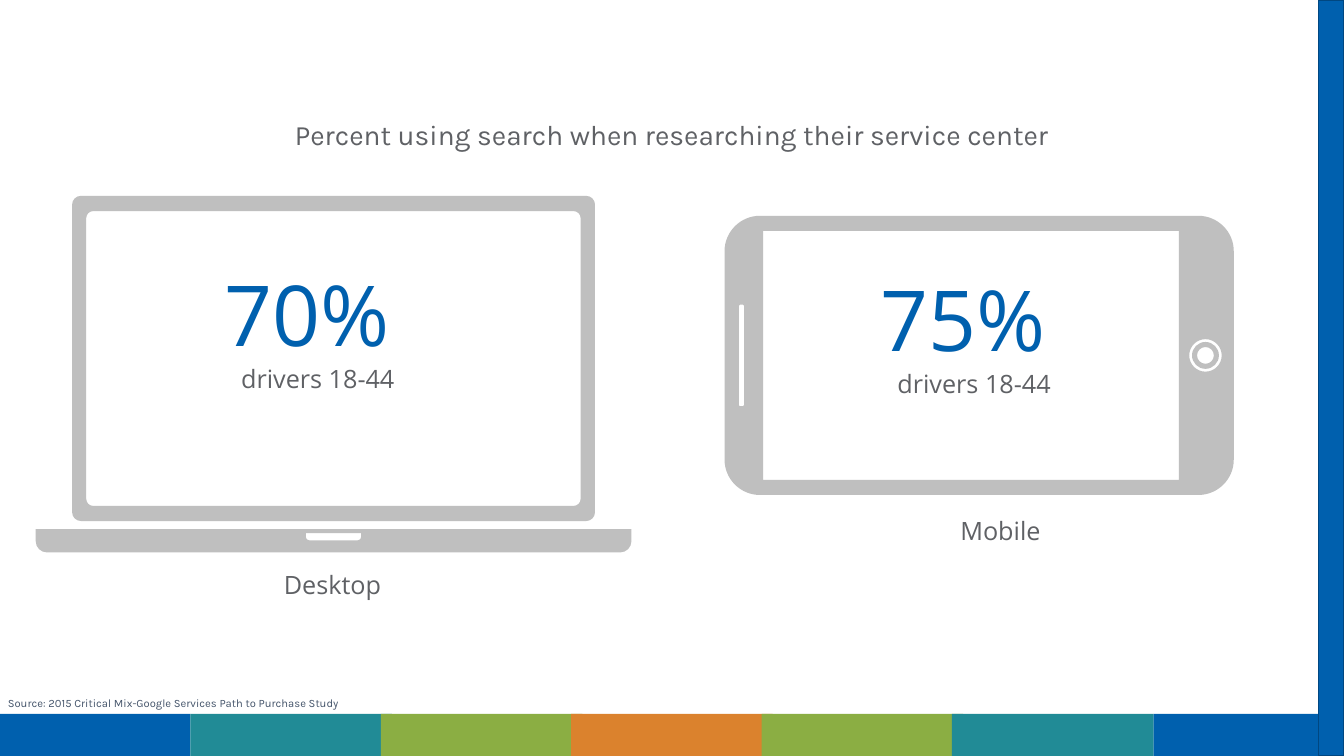
from lxml import etree
from pptx import Presentation
from pptx.dml import color
from pptx.enum import shapes, text
from pptx.oxml import ns
from pptx.util import Pt

COLORS = {
    "blue": "0060AE", "navy": "004781", "teal": "218B96", "green": "8BAE43",
    "orange": "DB822D", "silver": "BFBFBF", "gray": "5F6165", "slate": "44546A",
}
FORMATS = {
    "heading": {"name": "Karla", "size": Pt(20)},
    "percent": {"name": "Open Sans", "size": Pt(60)},
    "label": {"name": "Open Sans", "size": Pt(18)},
    "source": {"name": "Karla", "size": Pt(8)},
}
BAND = ["blue", "teal", "green", "orange", "green", "teal", "blue"]
BAND_STEP = 136
DIRECTIONS = [(1, 0), (0, 1), (-1, 0), (0, -1)]
ARC = 0.55


def rgb(name):
    return color.RGBColor.from_string(COLORS[name])


def paint(shape, fill, line=None):
    shape.shadow.inherit = False
    shape.fill.solid()
    shape.fill.fore_color.rgb = rgb(fill)
    if line:
        shape.line.color.rgb = rgb(line)
        shape.line.width = Pt(0.85)
    else:
        shape.line.fill.background()


def add_bar(slide, box, fill, line=None):
    bar = slide.shapes.add_shape(
        shapes.MSO_SHAPE.RECTANGLE, *[Pt(length) for length in box])
    paint(bar, fill, line)


def add_text(slide, box, lines, align=text.PP_ALIGN.CENTER):
    caption = slide.shapes.add_textbox(*[Pt(length) for length in box])
    frame = caption.text_frame
    frame.word_wrap = True
    for index, (words, style, ink) in enumerate(lines):
        paragraph = frame.add_paragraph() if index else frame.paragraphs[0]
        paragraph.alignment = align
        run = paragraph.add_run()
        run.text = words
        for key, value in FORMATS[style].items():
            setattr(run.font, key, value)
        run.font.color.rgb = rgb(ink)
    return frame


def rounded(left, top, right, bottom, upper=0, lower=0):
    corners = [
        (right - lower, bottom - lower, lower),
        (left + lower, bottom - lower, lower),
        (left + upper, top + upper, upper),
        (right - upper, top + upper, upper),
    ]
    steps = []
    for (x, y, radius), (ux, uy) in zip(corners, DIRECTIONS):
        weights = [(1, 0), (1, ARC), (ARC, 1), (0, 1)] if radius else [(0, 0)]
        for index, (along, across) in enumerate(weights):
            point = (Pt(x + radius * (along * ux - across * uy)),
                     Pt(y + radius * (along * uy + across * ux)))
            if index or not steps or steps[-1][0] != point:
                steps.append((point, index > 0))
    return steps


def circle(x, y, radius):
    return rounded(x - radius, y - radius, x + radius, y + radius, radius, radius)


def bend_corners(outline, contours):
    lines = list(outline.element.iter(ns.qn("a:lnTo")))
    flags = [curved for contour in contours for _, curved in contour[1:]]
    handles = [line for line, curved in zip(lines, flags) if curved]
    for start in range(0, len(handles), 3):
        trio = handles[start:start + 3]
        curve = etree.Element(ns.qn("a:cubicBezTo"))
        trio[0].addprevious(curve)
        for line in trio:
            curve.append(line[0])
            line.getparent().remove(line)


def add_device(slide, contours, rotation=0):
    tracks = [[point for point, _ in contour] for contour in contours]
    builder = slide.shapes.build_freeform(*tracks[0][0], scale=1.0)
    for index, track in enumerate(tracks):
        if index:
            builder.move_to(*track[0])
        builder.add_line_segments(track[1:], close=True)
    outline = builder.convert_to_shape()
    bend_corners(outline, contours)
    outline.rotation = rotation
    paint(outline, "silver")


def add_share(slide, left, top, percent):
    add_text(slide, (left, top, 362, 207),
             [(percent, "percent", "blue"), ("drivers 18-44", "label", "gray")])


def main():
    deck = Presentation()
    deck.slide_width, deck.slide_height = Pt(960), Pt(540)
    slide = deck.slides.add_slide(deck.slide_layouts[6])

    for index, fill in enumerate(BAND):
        last = index == len(BAND) - 1
        left = 960 - BAND_STEP if last else index * BAND_STEP
        width = BAND_STEP if index in (0, len(BAND) - 1) else 144
        add_bar(slide, (left, 510, width, 30), fill)
    add_bar(slide, (942, 0, 18, 540), "blue", "navy")

    add_share(slide, 46, 183.6, "70% ")
    add_text(slide, (92.7, 80.6, 774.7, 46), [
        ("Percent using search when researching their service center",
         "heading", "gray")])

    laptop = [
        rounded(218.4, 380.9, 258, 386, 0, 2.5),
        rounded(25.5, 378, 451, 394.6, 0, 8),
        rounded(61.6, 150.8, 414.7, 361.4, 5, 5),
        rounded(51.5, 139.9, 425, 372.2, 6.3, 6.3),
    ]
    phone = [
        circle(699.4, 415.5, 6),
        circle(699.4, 415.5, 9.6),
        circle(699.4, 415.5, 11.6),
        rounded(610.4, 99.6, 788.4, 396.6),
        rounded(663.2, 82.2, 735.6, 85.9, 0.7, 0.7),
        rounded(599.7, 72, 799.1, 435.7, 25.2, 25.2),
    ]
    add_device(slide, laptop)
    add_device(slide, phone, 270)
    add_share(slide, 514.8, 187.2, "75% ")

    add_text(slide, (143.2, 403.2, 188.6, 46), [("Desktop", "label", "gray")])
    add_text(slide, (620.3, 364.3, 188.6, 46), [("Mobile", "label", "gray")])
    source = add_text(slide, (-1.5, 493.6, 480, 17), [
        ("Source: 2015 Critical Mix-Google Services Path to Purchase Study",
         "source", "slate")], text.PP_ALIGN.LEFT)
    source.auto_size = text.MSO_AUTO_SIZE.SHAPE_TO_FIT_TEXT

    deck.save("out.pptx")


if __name__ == "__main__":
    main()
